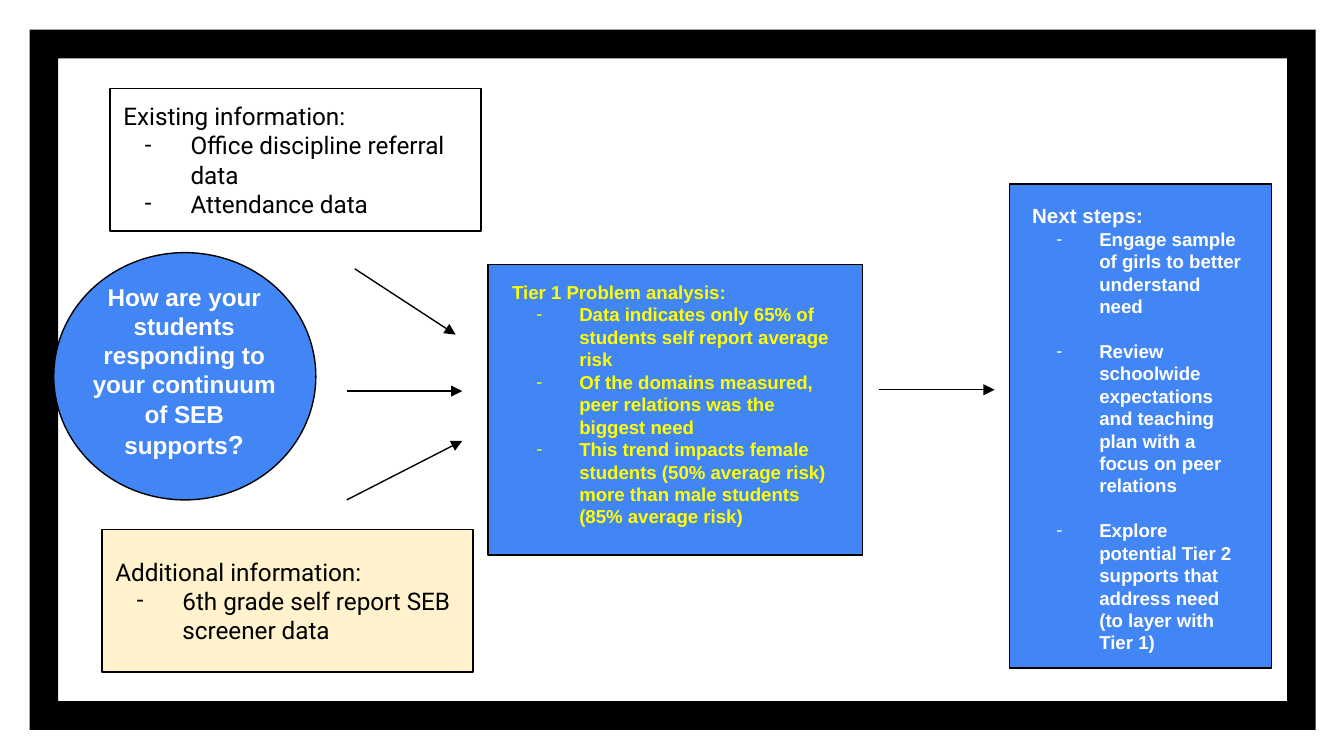
from dataclasses import dataclass

from lxml.etree import SubElement
from pptx import Presentation
from pptx.dml.color import RGBColor
from pptx.enum.shapes import MSO_CONNECTOR, MSO_SHAPE
from pptx.enum.text import MSO_ANCHOR, PP_ALIGN
from pptx.oxml.ns import qn
from pptx.util import Inches, Pt


@dataclass(frozen=True)
class Theme:
    black: str = "000000"
    white: str = "FFFFFF"
    blue: str = "4285F4"
    yellow: str = "FFFF00"
    cream: str = "FFF2CC"
    question_size: int = 13
    mark_size: int = 14
    heading_size: int = 11
    body_size: int = 10
    information_size: int = 13
    outline: float = 0.75


theme = Theme()
deck = Presentation()
deck.slide_width = Inches(10)
deck.slide_height = Inches(10 * 9 / 16)
slide = deck.slides.add_slide(deck.slide_layouts[6])


def add_panel(kind, place, fill=None, outlined=True):
    panel = slide.shapes.add_shape(kind, *map(Inches, place))
    panel.shadow.inherit = False
    if fill:
        panel.fill.solid()
        panel.fill.fore_color.rgb = RGBColor.from_string(fill)
    else:
        panel.fill.background()
    if outlined:
        panel.line.color.rgb = RGBColor.from_string(theme.black)
        panel.line.width = Pt(theme.outline)
    else:
        panel.line.fill.background()
    return panel


def write_text(box, paragraphs, color, font="Arial", bold=True, align=PP_ALIGN.LEFT,
               anchor=MSO_ANCHOR.TOP, margins=(0.07, 0.04), hanging=0.32, item_gap=0):
    """Each paragraph is a list of (text, size) runs; all after the first are dashed items."""
    frame = box.text_frame
    frame.word_wrap = True
    frame.vertical_anchor = anchor
    frame.margin_left = frame.margin_right = Inches(margins[0])
    frame.margin_top = frame.margin_bottom = Inches(margins[1])
    for index, runs in enumerate(paragraphs):
        para = frame.add_paragraph() if index else frame.paragraphs[0]
        para.alignment = align
        if index:
            para.space_before = Pt(item_gap if index > 1 else 0)
            properties = para._p.get_or_add_pPr()
            properties.set("marL", str(Inches(0.5)))
            properties.set("indent", str(-Inches(hanging)))
            bullet_color = SubElement(properties, qn("a:buClr"))
            SubElement(bullet_color, qn("a:srgbClr"), val=color)
            SubElement(properties, qn("a:buFont"), typeface=font)
            SubElement(properties, qn("a:buChar"), char="-")
        for text, size in runs:
            span = para.add_run()
            span.text = text
            span.font.name = font
            span.font.size = Pt(size)
            span.font.bold = bold
            span.font.color.rgb = RGBColor.from_string(color)


border = add_panel(MSO_SHAPE.FRAME, (0.22, 0.22, 9.57, 5.21), theme.black, outlined=False)
border.adjustments[0] = 0.041

# Blue panels, each with its text box
blue_panels = [
    (MSO_SHAPE.OVAL, (0.4, 1.88, 1.95, 1.84), (0.61, 2.06, 1.52, 1.42),
     [[("How are your students responding to your continuum of SEB supports",
        theme.question_size), ("?", theme.mark_size)]],
     dict(color=theme.white, align=PP_ALIGN.CENTER)),
    (MSO_SHAPE.RECTANGLE, (7.51, 1.37, 1.95, 3.6), (7.61, 1.47, 1.74, 1.56),
     [[("Next steps:", theme.heading_size)],
      [("Engage sample of girls to better understand need", theme.body_size)],
      [("Review schoolwide expectations and teaching plan with a focus on peer relations",
        theme.body_size)],
      [("Explore potential Tier 2 supports that address need (to layer with Tier 1)",
        theme.body_size)]],
     dict(color=theme.white, item_gap=12)),
    (MSO_SHAPE.RECTANGLE, (3.63, 1.97, 2.79, 2.16), (3.74, 2.05, 2.59, 2.03),
     [[("Tier 1 Problem analysis:", theme.body_size)],
      [("Data indicates only 65% of students self report average risk", theme.body_size)],
      [("Of the domains measured, peer relations was the biggest need", theme.body_size)],
      [("This trend impacts female students (50% average risk) more than male students "
        "(85% average risk)", theme.body_size)]],
     dict(color=theme.yellow)),
]
for kind, panel_place, text_place, paragraphs, text_format in blue_panels:
    add_panel(kind, panel_place, theme.blue)
    box = slide.shapes.add_textbox(*map(Inches, text_place))
    write_text(box, paragraphs, **text_format)

# Information boxes
information_boxes = [
    ((0.76, 3.94), theme.cream,
     ["Additional information:", "6th grade self report SEB screener data"]),
    ((0.82, 0.66), None,
     ["Existing information:", "Office discipline referral data", "Attendance data"]),
]
for corner, fill, lines in information_boxes:
    panel = add_panel(MSO_SHAPE.RECTANGLE, (*corner, 2.76, 1.06), fill)
    write_text(panel, [[(line, theme.information_size)] for line in lines],
               color=theme.black, font="Roboto", bold=False, anchor=MSO_ANCHOR.MIDDLE,
               margins=(0.1, 0.1), hanging=0.34)

# Arrows into the analysis and on to the next steps
arrows = [
    (2.64, 2, 3.39, 2.49),
    (2.58, 2.91, 3.44, 2.91),
    (2.58, 3.72, 3.44, 3.28),
    (6.54, 2.9, 7.4, 2.9),
]
for ends in arrows:
    arrow = slide.shapes.add_connector(MSO_CONNECTOR.STRAIGHT, *map(Inches, ends))
    arrow.line.color.rgb = RGBColor.from_string(theme.black)
    arrow.line.width = Pt(theme.outline)
    SubElement(arrow.line._get_or_add_ln(), qn("a:tailEnd"), type="triangle")
    SubElement(arrow._element.spPr, qn("a:effectLst"))

deck.save("out.pptx")
